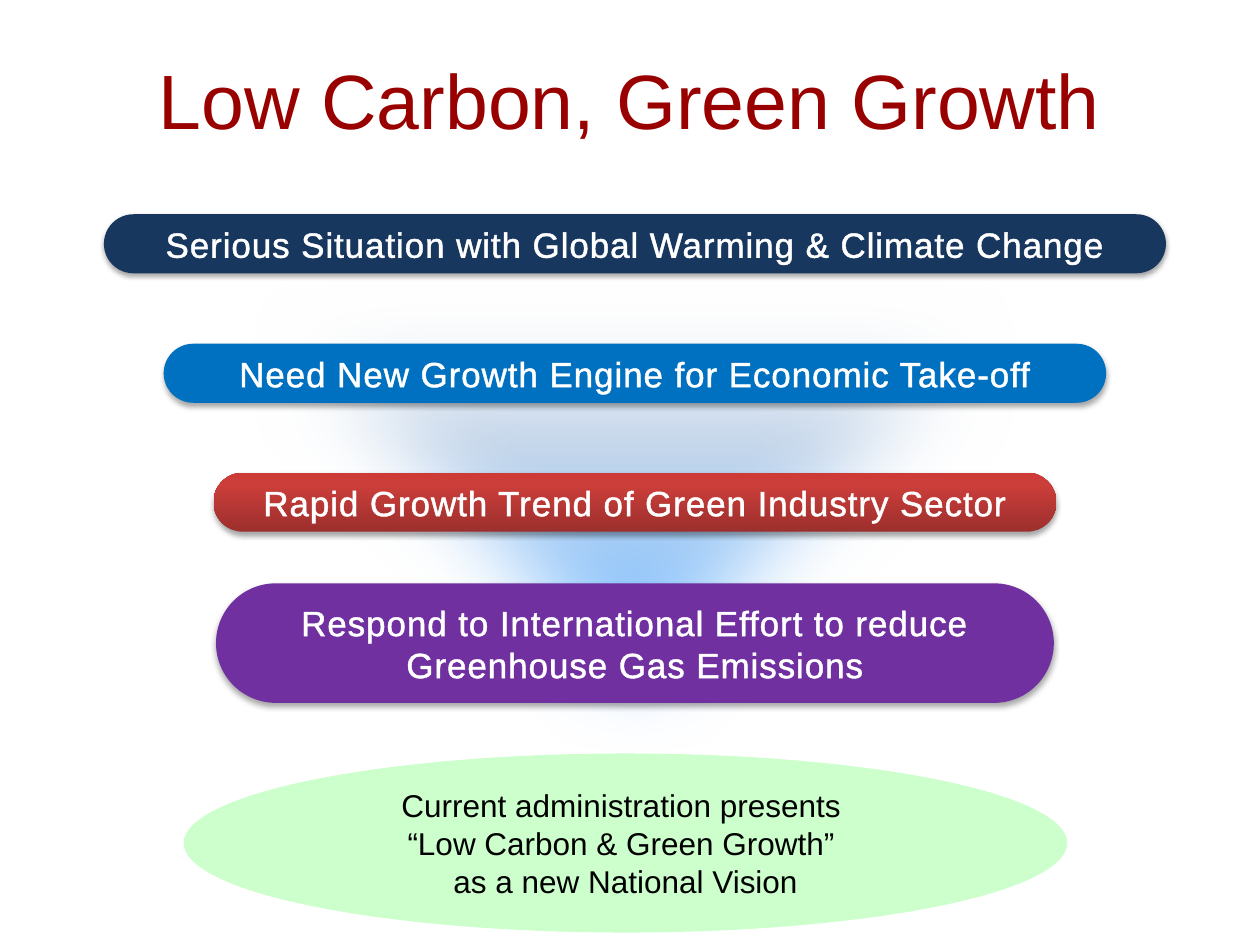
from dataclasses import dataclass

from lxml import etree
from pptx import Presentation
from pptx import util as u
from pptx.dml.color import RGBColor
from pptx.enum import shapes, text
from pptx.oxml import ns


@dataclass(frozen=True)
class Theme:
    font: str = "Arial"
    title: str = "990000"
    light: str = "FFFFFF"
    dark: str = "000000"
    navy: str = "17375E"
    blue: str = "0070C0"
    purple: str = "7030A0"
    mint: str = "CCFFCC"
    red: tuple = ((0, "9C2F2D"), (80, "CB3E3A"), (100, "CE3B37"))
    funnel: tuple = ((0, "5E9EFF"), (40, "85C2FF"), (70, "C4D6EB"), (100, "F2F2F2"))
    title_size: int = 44
    bar_size: int = 20
    vision_size: int = 18


THEME = Theme()
AXIS = 12.8  # shared centre line of the funnel and its bars, in cm


def xml(markup):
    return etree.fromstring(markup.replace(">", f' {ns.nsdecls("a")}>', 1))


def write(shape, lines, *, size, color, inset=None, spacing=0, outline=0):
    frame = shape.text_frame
    frame.word_wrap = True
    frame.vertical_anchor = text.MSO_ANCHOR.MIDDLE
    if inset is not None:
        frame.margin_left = frame.margin_right = u.Cm(inset)
        frame.margin_top = frame.margin_bottom = u.Cm(inset)
    for index, line in enumerate(lines):
        paragraph = frame.add_paragraph() if index else frame.paragraphs[0]
        paragraph.alignment = text.PP_ALIGN.CENTER
        run = paragraph.add_run()
        run.text = line
        run.font.name = THEME.font
        run.font.size = u.Pt(size)
        run.font.color.rgb = RGBColor.from_string(color)
        properties = run.font._element
        if spacing:
            properties.set("spc", str(round(spacing * 100)))
        if outline:
            properties.insert(0, xml(
                f'<a:ln w="{u.Pt(outline)}"><a:solidFill><a:srgbClr val="{color}"/>'
                "</a:solidFill></a:ln>"))


def paint(shape, fill, angle):
    """Fill with one colour, or with (percent, colour) stops running clockwise at angle."""
    if isinstance(fill, str):
        shape.fill.solid()
        shape.fill.fore_color.rgb = RGBColor.from_string(fill)
        return
    stops = "".join(f'<a:gs pos="{percent * 1000}"><a:srgbClr val="{color}"/></a:gs>'
                    for percent, color in fill)
    geometry = shape._element.spPr.find(ns.qn("a:prstGeom"))
    geometry.addnext(xml(f'<a:gradFill rotWithShape="1"><a:gsLst>{stops}</a:gsLst>'
                         f'<a:lin ang="{angle * 60000}" scaled="0"/></a:gradFill>'))


def add_figure(slide, kind, center, top, width, height, fill, angle=0):
    figure = slide.shapes.add_shape(
        kind, u.Cm(center - width / 2), u.Cm(top), u.Cm(width), u.Cm(height))
    figure.shadow.inherit = False
    figure.line.fill.background()
    paint(figure, fill, angle)
    return figure


def add_effect(shape, markup):
    shape._element.spPr.find(ns.qn("a:effectLst")).append(xml(markup))


def add_title(slide, wording):
    title = slide.shapes.add_textbox(u.Cm(1.27), u.Cm(1.12), u.Cm(22.86), u.Cm(1.75))
    write(title, [wording], size=THEME.title_size, color=THEME.title)


def add_funnel(slide):
    funnel = add_figure(slide, shapes.MSO_SHAPE.ISOSCELES_TRIANGLE,
                        AXIS, 5.59, 23.01, 11.56, THEME.funnel, angle=90)
    funnel.rotation = 180
    add_effect(funnel, f'<a:softEdge rad="{u.Pt(50)}"></a:softEdge>')


def add_bar(slide, wording, top, width, height, fill):
    bar = add_figure(slide, shapes.MSO_SHAPE.ROUNDED_RECTANGLE,
                     AXIS, top, width, height, fill, angle=270)
    bar.adjustments[0] = 0.5
    add_effect(bar, f'<a:outerShdw blurRad="{u.Pt(3.1)}" dist="{u.Pt(1.8)}" dir="5400000" '
                    f'rotWithShape="0"><a:srgbClr val="{THEME.dark}">'
                    '<a:alpha val="35000"/></a:srgbClr></a:outerShdw>')
    write(bar, [wording], size=THEME.bar_size, color=THEME.light,
          inset=0, spacing=0.5, outline=1.45)


def add_vision(slide, lines):
    vision = add_figure(slide, shapes.MSO_SHAPE.OVAL, 12.61, 15.19, 17.81, 3.61, THEME.mint)
    write(vision, lines, size=THEME.vision_size, color=THEME.dark)


def main():
    deck = Presentation()
    deck.slide_width, deck.slide_height = u.Cm(25.4), u.Cm(19.05)
    slide = deck.slides.add_slide(deck.slide_layouts[6])

    add_title(slide, "Low Carbon, Green Growth")
    add_funnel(slide)
    drivers = [
        ("Serious Situation with Global Warming & Climate Change",
         4.32, 21.41, 1.19, THEME.navy),
        ("Need New Growth Engine for Economic Take-off", 6.93, 19, 1.19, THEME.blue),
        ("Rapid Growth Trend of Green Industry Sector", 9.53, 16.99, 1.19, THEME.red),
        ("Respond to International Effort to reduce Greenhouse Gas Emissions",
         11.76, 16.89, 2.41, THEME.purple),
    ]
    for driver in drivers:
        add_bar(slide, *driver)
    add_vision(slide, ["Current administration presents ",
                       "“Low Carbon & Green Growth” ",
                       "as a new National Vision"])
    deck.save("out.pptx")


if __name__ == "__main__":
    main()
